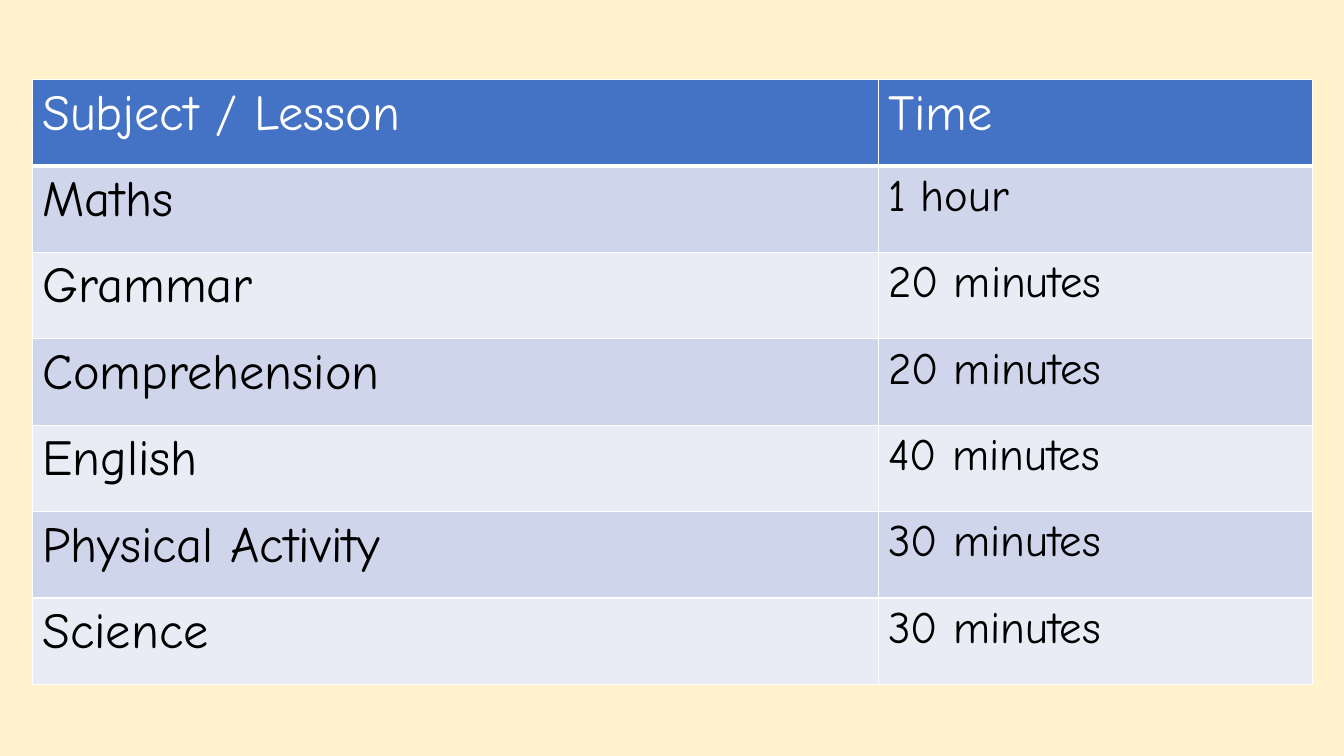
from dataclasses import dataclass

from lxml.etree import SubElement
from pptx import Presentation
from pptx.dml.color import RGBColor
from pptx.oxml.ns import qn
from pptx.table import Table, _Cell
from pptx.util import Inches, Pt


@dataclass(frozen=True)
class Theme:
    font: str = "Comic Neue"
    page: str = "FFF2CC"
    head: str = "4472C4"
    bands: tuple[str, str] = ("CFD5EA", "E9EBF5")
    light: str = "FFFFFF"
    dark: str = "000000"
    large: int = 36
    small: int = 32
    rule: int = 1
    thick: int = 3


@dataclass(frozen=True)
class Lesson:
    name: str
    time: str


THEME = Theme()
HEADING = Lesson("Subject / Lesson", "Time")
LESSONS = [
    Lesson("Maths", "1 hour"),
    Lesson("Grammar", "20 minutes"),
    Lesson("Comprehension", "20 minutes"),
    Lesson("English", "40 minutes"),
    Lesson("Physical Activity", "30 minutes"),
    Lesson("Science", "30 minutes"),
]
LEFT, TOP, HEIGHT = 0.32, 0.79, 6
WIDTHS = (8.39, 4.31)


def write(cell: _Cell, text: str, *, size: int, color: str) -> None:
    run = cell.text_frame.paragraphs[0].add_run()
    run.text = text
    run.font.name = THEME.font
    run.font.size = Pt(size)
    run.font.bold = False
    run.font.color.rgb = RGBColor.from_string(color)


def border(cell: _Cell, base: int) -> None:
    """Rule all four sides of a cell; base is the bottom width in points."""
    props = cell._tc.get_or_add_tcPr()
    sides = {"lnL": THEME.rule, "lnR": THEME.rule, "lnT": THEME.rule, "lnB": base}
    for place, (side, width) in enumerate(sides.items()):
        line = SubElement(props, qn(f"a:{side}"), w=str(Pt(width)))
        fill = SubElement(line, qn("a:solidFill"))
        SubElement(fill, qn("a:srgbClr"), val=THEME.light)
        props.insert(place, line)


def paint(cell: _Cell, fill: str, base: int) -> None:
    cell.fill.solid()
    cell.fill.fore_color.rgb = RGBColor.from_string(fill)
    border(cell, base)


def fill_row(table: Table, row: int, lesson: Lesson) -> None:
    head = row == 0
    fill = THEME.head if head else THEME.bands[(row - 1) % 2]
    color = THEME.light if head else THEME.dark
    sizes = (THEME.large, THEME.large if head else THEME.small)
    for col, (text, size) in enumerate(zip((lesson.name, lesson.time), sizes)):
        cell = table.cell(row, col)
        write(cell, text, size=size, color=color)
        paint(cell, fill, THEME.thick if head else THEME.rule)


def main() -> None:
    deck = Presentation()
    deck.slide_width, deck.slide_height = Inches(13.33), Inches(7.5)
    slide = deck.slides.add_slide(deck.slide_layouts[6])
    slide.background.fill.solid()
    slide.background.fill.fore_color.rgb = RGBColor.from_string(THEME.page)

    rows = [HEADING, *LESSONS]
    table = slide.shapes.add_table(
        len(rows), len(WIDTHS),
        Inches(LEFT), Inches(TOP), Inches(sum(WIDTHS)), Inches(HEIGHT),
    ).table
    for column, width in zip(table.columns, WIDTHS):
        column.width = Inches(width)
    for row, lesson in enumerate(rows):
        fill_row(table, row, lesson)
    deck.save("out.pptx")


if __name__ == "__main__":
    main()
